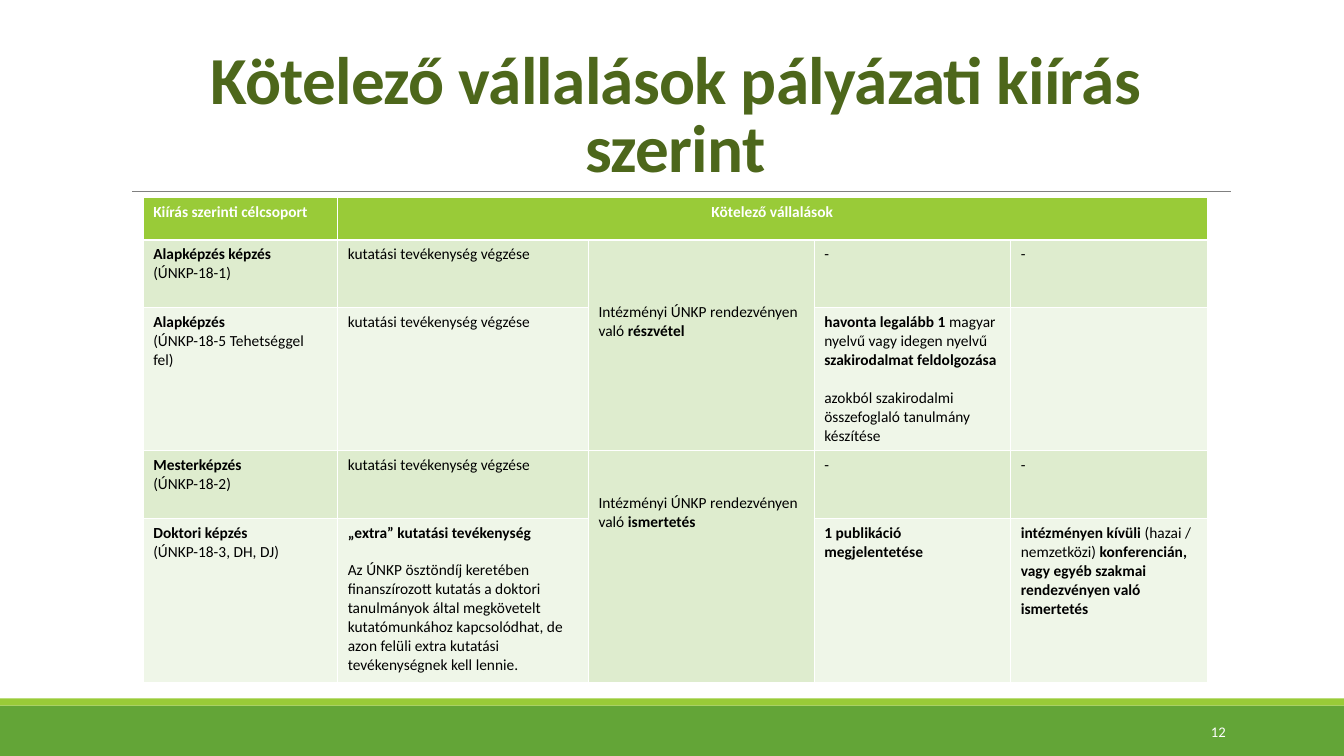
from dataclasses import dataclass

from lxml import etree
from pptx import Presentation
from pptx.dml.color import RGBColor
from pptx.enum.shapes import MSO_CONNECTOR, MSO_SHAPE
from pptx.enum.text import MSO_ANCHOR, PP_ALIGN
from pptx.oxml.ns import qn
from pptx.util import Cm, Pt

LEFT, CENTER, RIGHT = PP_ALIGN.LEFT, PP_ALIGN.CENTER, PP_ALIGN.RIGHT
TOP, MIDDLE, BOTTOM = MSO_ANCHOR.TOP, MSO_ANCHOR.MIDDLE, MSO_ANCHOR.BOTTOM
RECT, STRAIGHT = MSO_SHAPE.RECTANGLE, MSO_CONNECTOR.STRAIGHT


@dataclass(frozen=True)
class Theme:
    font: str = "Calibri"
    title: str = "4D671B"
    green: str = "63A537"
    lime: str = "99CB38"
    bands: tuple = ("DEECCE", "EFF6E8")
    rule: str = "808080"
    white: str = "FFFFFF"
    black: str = "000000"
    big: float = 48
    body: float = 11
    small: float = 10.5


theme = Theme()


def put(frame, text, size=theme.body, color=theme.black, align=LEFT,
        anchor=TOP, gap=0, lead=1.0, track=0):
    """Fill a frame: ** toggles bold, a new line starts a paragraph after gap."""
    frame.word_wrap = True
    frame.vertical_anchor = anchor
    for i, line in enumerate(text.split("\n")):
        para = frame.add_paragraph() if i else frame.paragraphs[0]
        para.alignment, para.line_spacing = align, lead
        para.space_before = Pt(gap if i else 0)
        for j, part in enumerate(line.split("**")):
            if not part:
                continue
            run = para.add_run()
            run.text = part
            font = run.font
            font.name, font.size, font.bold = theme.font, Pt(size), j % 2 == 1
            font.color.rgb = RGBColor.from_string(color)
            if track:
                run._r.get_or_add_rPr().set("spc", str(track))


deck = Presentation()
deck.slide_width, deck.slide_height = Cm(33.87), Cm(19.05)
slide = deck.slides.add_slide(deck.slide_layouts[6])
shapes = slide.shapes

# Footer bands and title rule
for top, high, color in ((17.78, 1.27, theme.green), (17.6, 0.18, theme.lime)):
    band = shapes.add_shape(RECT, 0, Cm(top), deck.slide_width, Cm(high))
    band.shadow.inherit = False
    band.fill.solid()
    band.fill.fore_color.rgb = RGBColor.from_string(color)
    band.line.fill.background()

rule = shapes.add_connector(STRAIGHT, Cm(3.33), Cm(4.82), Cm(31.01), Cm(4.82))
rule.line.color.rgb = RGBColor.from_string(theme.rule)
rule.line.width = Pt(0.5)
etree.SubElement(rule._element.spPr, qn("a:effectLst"))

# Title and page number
title = shapes.add_textbox(Cm(3.05), Cm(0.79), Cm(27.94), Cm(4.04))
put(title.text_frame, "**Kötelező vállalások pályázati kiírás szerint**",
    size=theme.big, color=theme.title, align=CENTER, anchor=BOTTOM,
    lead=0.85, track=-50)
page = shapes.add_textbox(Cm(27.51), Cm(17.93), Cm(3.63), Cm(1.02))
put(page.text_frame, "12", size=theme.small, color=theme.white,
    align=RIGHT, anchor=MIDDLE)

# Table of commitments
work = "kutatási tevékenység végzése"
event = "Intézményi ÚNKP rendezvényen való "
rows = [
    ["**Kiírás szerinti célcsoport**", "**Kötelező vállalások**", "", "", ""],
    ["**Alapképzés képzés**\n(ÚNKP-18-1)", work, event + "**részvétel**",
     "-", "-"],
    ["**Alapképzés**\n(ÚNKP-18-5 Tehetséggel fel)", work, "",
     "**havonta legalább 1** magyar nyelvű vagy idegen nyelvű "
     "**szakirodalmat feldolgozása**\n"
     "azokból szakirodalmi összefoglaló tanulmány készítése", ""],
    ["**Mesterképzés**\n(ÚNKP-18-2)", work, event + "**ismertetés**",
     "-", "-"],
    ["**Doktori képzés**\n(ÚNKP-18-3, DH, DJ)",
     "**„extra” kutatási tevékenység**\n"
     "Az ÚNKP ösztöndíj keretében finanszírozott kutatás a doktori "
     "tanulmányok által megkövetelt kutatómunkához kapcsolódhat, de azon "
     "felüli extra kutatási tevékenységnek kell lennie.", "",
     "**1 publikáció megjelentetése**",
     "**intézményen kívüli** (hazai / nemzetközi) **konferencián, vagy "
     "egyéb szakmai rendezvényen való ismertetés**"],
]
wides = (4.9, 6.32, 5.69, 4.95, 4.95)
highs = (1.07, 1.7, 3.61, 1.7, 4.14)
grid = shapes.add_table(len(rows), len(wides), Cm(3.61), Cm(4.98),
                        Cm(sum(wides)), Cm(sum(highs))).table
for col, wide in zip(grid.columns, wides):
    col.width = Cm(wide)
for row, high in zip(grid.rows, highs):
    row.height = Cm(high)

for r, row in enumerate(rows):
    for c, text in enumerate(row):
        cell = grid.cell(r, c)
        cell.fill.solid()
        fill = theme.bands[(r - 1) % 2] if r else theme.lime
        cell.fill.fore_color.rgb = RGBColor.from_string(fill)
        put(cell.text_frame, text, color=theme.black if r else theme.white,
            align=LEFT if r or not c else CENTER, gap=13.4 if c else 0)

grid.cell(0, 1).merge(grid.cell(0, 4))
for r, drop in ((1, 1.57), (3, 1.09)):
    grid.cell(r, 2).merge(grid.cell(r + 1, 2))
    grid.cell(r, 2).margin_top = Cm(drop)

deck.save("out.pptx")
